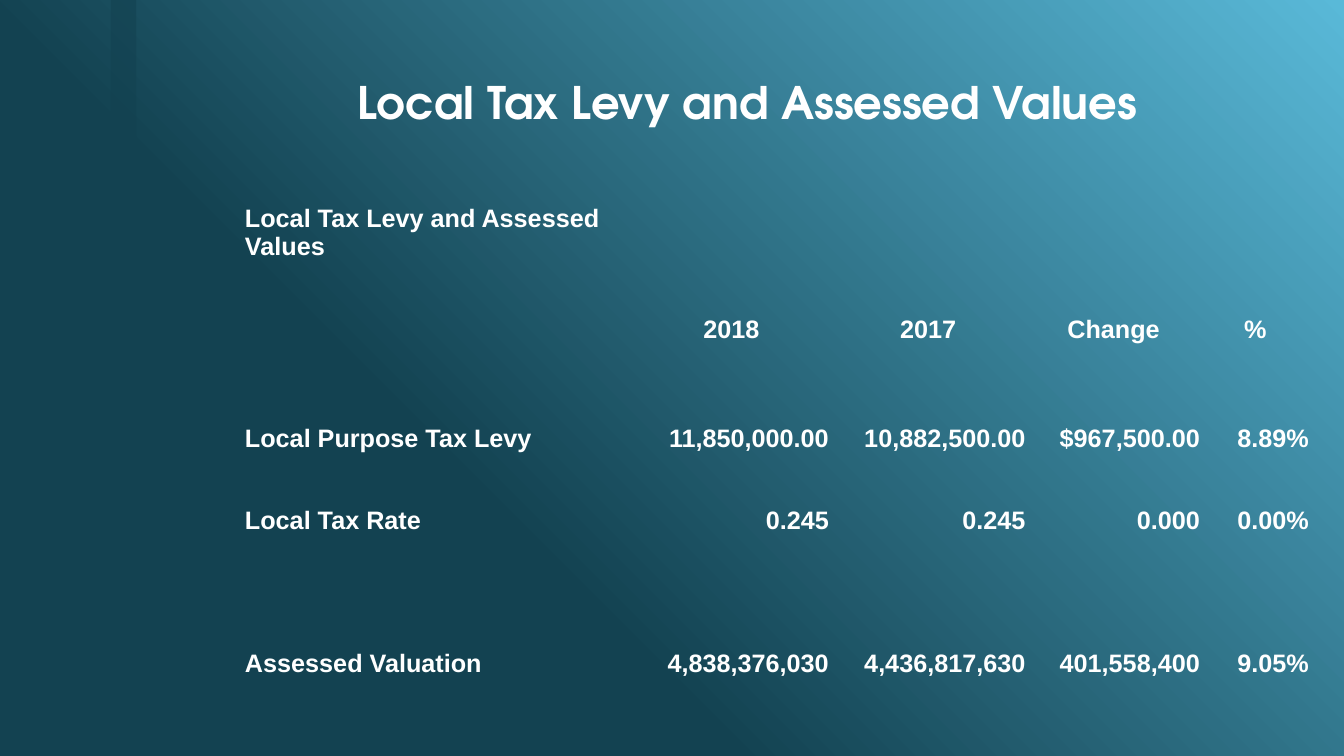
from lxml.etree import SubElement
from pptx import Presentation
from pptx.dml.color import RGBColor
from pptx.enum.shapes import MSO_SHAPE
from pptx.enum.text import MSO_ANCHOR, PP_ALIGN
from pptx.oxml.ns import qn
from pptx.util import Inches, Pt

NO_GRID_STYLE = "{2D5ABB26-0587-4C30-8999-92F81FD0307C}"
LEFT, CENTER, RIGHT = PP_ALIGN.LEFT, PP_ALIGN.CENTER, PP_ALIGN.RIGHT

COLUMN_WIDTHS = [3.86, 1.95, 1.95, 1.73, 1.08]
ROW_HEIGHTS = [0.67, 0.41, 0.41, 0.41, 0.67, 0.41, 0.41, 0.41, 1.01, 0.41]
# Rows not listed here are empty spacers.
LEVY_ROWS = {
    0: ["Local Tax Levy and Assessed Values"],
    2: ["", "2018", "2017", "Change", "%"],
    4: ["Local Purpose Tax Levy", "11,850,000.00", "10,882,500.00", "$967,500.00", "8.89%"],
    6: ["Local Tax Rate", "0.245", "0.245", "0.000", "0.00%"],
    8: ["Assessed Valuation", "4,838,376,030", "4,436,817,630", "401,558,400", "9.05%"],
}
HEADER_ROW = 2


def color(value):
    return RGBColor.from_string(value)


class LevySlide:
    light, dark, text_color = "59B9D8", "134251", "FFFFFF"
    title_font, table_font = "TeX Gyre Adventor", "Arial"

    def __init__(self, prs):
        self.s = prs.slides.add_slide(prs.slide_layouts[6])

    def style(self, p, font, size, align):
        p.alignment = align
        for r in p.runs:
            r.font.name = font
            r.font.size = Pt(size)
            r.font.bold = True
            r.font.color.rgb = color(self.text_color)

    def background(self):
        """Fade from the light top right corner to the dark colour."""
        fill = self.s.background.fill
        fill.gradient()
        fill.gradient_angle = 225
        stops = ((0, self.light), (0.65, self.dark))
        for stop, (position, value) in zip(fill.gradient_stops, stops):
            stop.position = position
            stop.color.rgb = color(value)

    def bar(self, x, y, w, h, opacity):
        sp = self.s.shapes.add_shape(
            MSO_SHAPE.RECTANGLE, Inches(x), Inches(y), Inches(w), Inches(h))
        sp.shadow.inherit = False
        sp.line.fill.background()
        sp.fill.solid()
        sp.fill.fore_color.rgb = color(self.dark)
        srgb = sp.fill._xPr.find(".//" + qn("a:srgbClr"))
        SubElement(srgb, qn("a:alpha")).set("val", str(opacity * 1000))

    def title(self, text, x, y, w, h):
        sp = self.s.shapes.add_textbox(Inches(x), Inches(y), Inches(w), Inches(h))
        tf = sp.text_frame
        tf.word_wrap = True
        tf.vertical_anchor = MSO_ANCHOR.MIDDLE
        tf.text = text
        p = tf.paragraphs[0]
        p.line_spacing = 0.9
        self.style(p, self.title_font, 32, CENTER)

    def cell(self, cell, text, align):
        cell.fill.background()
        cell.vertical_anchor = MSO_ANCHOR.BOTTOM
        cell.margin_left = cell.margin_right = cell.margin_top = Inches(0.01)
        cell.margin_bottom = 0
        if text:
            cell.text_frame.text = text
            self.style(cell.text_frame.paragraphs[0], self.table_font, 18, align)

    def table(self, x, y):
        table = self.s.shapes.add_table(
            len(ROW_HEIGHTS), len(COLUMN_WIDTHS), Inches(x), Inches(y),
            Inches(sum(COLUMN_WIDTHS)), Inches(sum(ROW_HEIGHTS))).table
        table.first_row = table.horz_banding = False
        table._tbl.tblPr.find(qn("a:tableStyleId")).text = NO_GRID_STYLE
        for column, width in zip(table.columns, COLUMN_WIDTHS):
            column.width = Inches(width)
        for i, height in enumerate(ROW_HEIGHTS):
            table.rows[i].height = Inches(height)
            texts = LEVY_ROWS.get(i, [])
            for j in range(len(COLUMN_WIDTHS)):
                value_align = CENTER if i == HEADER_ROW else RIGHT
                self.cell(table.cell(i, j), texts[j] if j < len(texts) else "",
                          value_align if j else LEFT)


def main():
    prs = Presentation()
    prs.slide_width, prs.slide_height = Inches(13.33), Inches(7.5)
    slide = LevySlide(prs)
    slide.background()
    slide.bar(1.1, 0, 0.25, 7.5, opacity=60)
    slide.title("Local Tax Levy and Assessed Values", 2.25, 0.42, 10.33, 1.25)
    slide.table(2.42, 1.92)
    prs.save("out.pptx")


if __name__ == "__main__":
    main()
